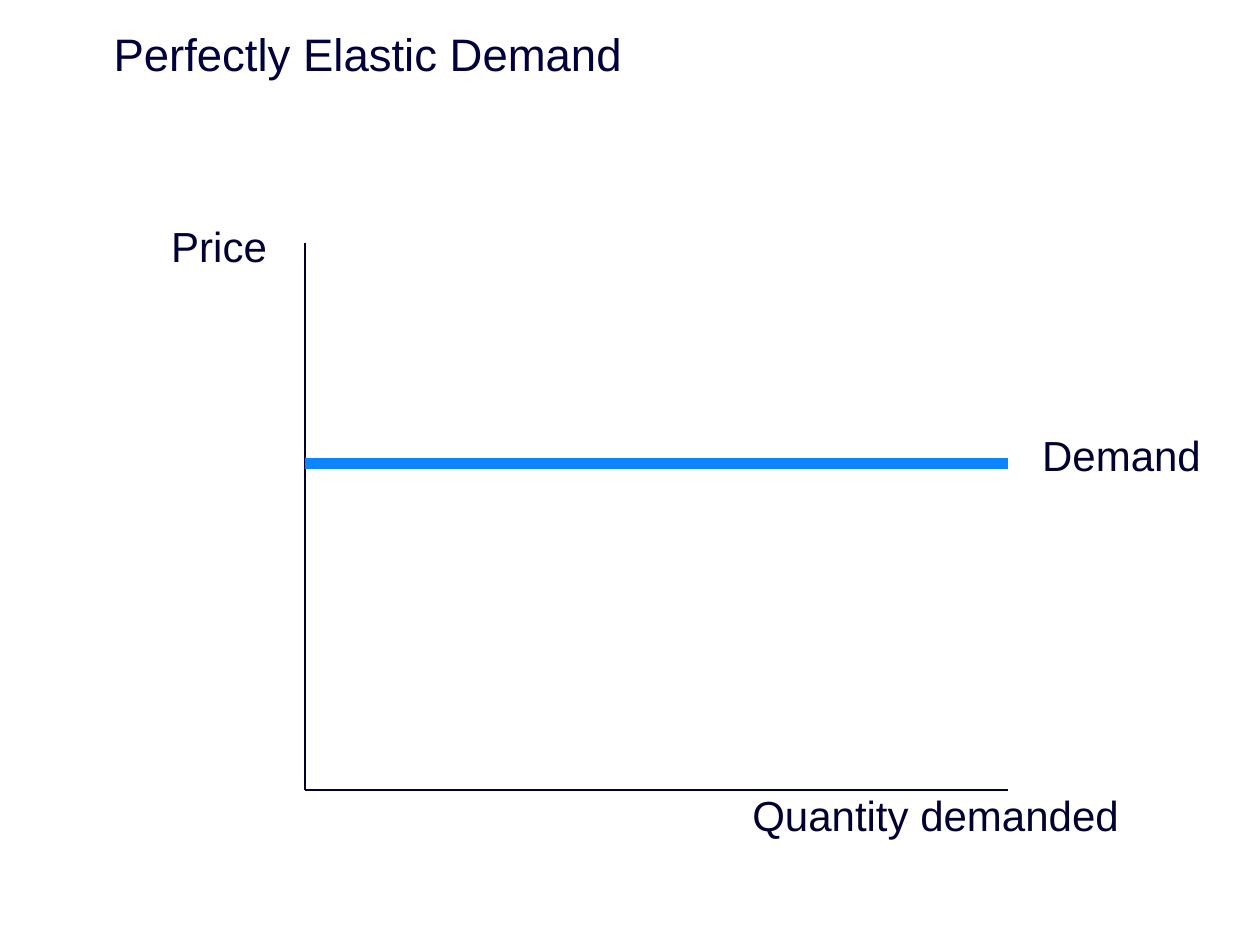
import dataclasses

import pptx
import pptx.dml.color
import pptx.enum.shapes
import pptx.enum.text
import pptx.oxml.ns
import pptx.util
import lxml.etree

Pt = pptx.util.Pt
RGB = pptx.dml.color.RGBColor.from_string


@dataclasses.dataclass(frozen=True)
class Theme:
    font: str = "Arial"
    title: str = "00003E"
    ink: str = "000032"
    demand: str = "0A85FF"
    background: str = "FFFFFF"
    title_size: int = 26
    label_size: int = 24


theme = Theme()


def set_text(sp, text, *, size, color, insets, wrap, anchor):
    tf = sp.text_frame
    tf.word_wrap = wrap
    tf.vertical_anchor = anchor
    tf.margin_left, tf.margin_top, tf.margin_right, tf.margin_bottom = map(Pt, insets)
    p = tf.paragraphs[0]
    p.alignment = pptx.enum.text.PP_ALIGN.LEFT
    r = p.add_run()
    r.text = text
    r.font.name = theme.font
    r.font.size = Pt(size)
    r.font.color.rgb = RGB(color)
    return tf


prs = pptx.Presentation()
prs.slide_width, prs.slide_height = Pt(720), Pt(540)
s = prs.slides.add_slide(prs.slide_layouts[5])
s.background.fill.solid()
s.background.fill.fore_color.rgb = RGB(theme.background)

title = s.shapes.title
title.left, title.top, title.width, title.height = Pt(36), Pt(-6.5), Pt(671.8), Pt(73.4)
set_text(title, "Perfectly Elastic Demand", size=theme.title_size, color=theme.title,
         insets=(28.9, 3.6, 10, 3.6), wrap=True, anchor=pptx.enum.text.MSO_ANCHOR.MIDDLE)

left, right = 174.2, 576
top, price, bottom = 139, 265, 451.4
lines = [
    (left, top, left, bottom, theme.ink, 1),
    (left, bottom, right, bottom, theme.ink, 1),
    (left, price, right, price, theme.demand, 6),
]
for x1, y1, x2, y2, color, width in lines:
    line = s.shapes.add_connector(pptx.enum.shapes.MSO_CONNECTOR.STRAIGHT,
                                  Pt(x1), Pt(y1), Pt(x2), Pt(y2))
    line.line.color.rgb = RGB(color)
    line.line.width = Pt(width)
    lxml.etree.SubElement(line._element.spPr, pptx.oxml.ns.qn("a:effectLst"))

labels = [
    ("Demand", 592.6, 245.5, 97.9),
    ("Quantity demanded", 427, bottom, 218.2),
    ("Price", 95, 126, 61.9),
]
for text, x, y, width in labels:
    sp = s.shapes.add_textbox(Pt(x), Pt(y), Pt(width), Pt(28.8))
    tf = set_text(sp, text, size=theme.label_size, color=theme.ink,
                  insets=(2.9, 0, 2.9, 0), wrap=False, anchor=pptx.enum.text.MSO_ANCHOR.TOP)
    tf.auto_size = pptx.enum.text.MSO_AUTO_SIZE.SHAPE_TO_FIT_TEXT

prs.save("out.pptx")
